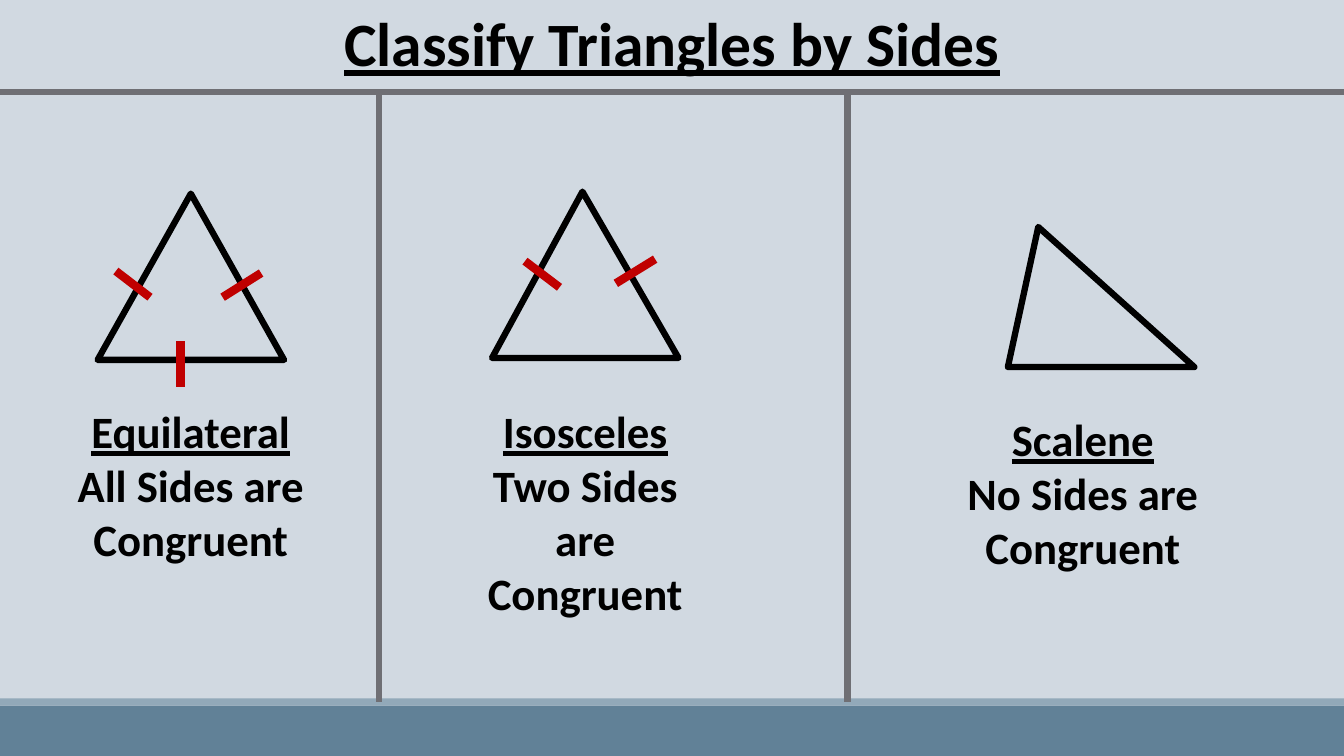
from lxml import etree
from pptx import Presentation
from pptx.dml.color import RGBColor
from pptx.enum.shapes import MSO_CONNECTOR, MSO_SHAPE
from pptx.enum.text import MSO_AUTO_SIZE, PP_ALIGN
from pptx.oxml.ns import qn
from pptx.util import Cm, Pt

STRAIGHT = MSO_CONNECTOR.STRAIGHT
RECTANGLE = MSO_SHAPE.RECTANGLE
TRIANGLE = MSO_SHAPE.ISOSCELES_TRIANGLE
CENTER = PP_ALIGN.CENTER
GROW = MSO_AUTO_SIZE.SHAPE_TO_FIT_TEXT

COLORS = {name: RGBColor.from_string(code) for name, code in {
    "background": "D1D9E1",
    "band": "618197",
    "band edge": "92A9B9",
    "rule": "6F6F74",
    "ink": "000000",
    "tick": "C00000",
}.items()}

WIDTH, HEIGHT = 33.87, 19.05
RULE_Y, DIVIDER_END = 2.31, 17.68

prs = Presentation()
prs.slide_width, prs.slide_height = Cm(WIDTH), Cm(HEIGHT)
slide = prs.slides.add_slide(prs.slide_layouts[6])
slide.background.fill.solid()
slide.background.fill.fore_color.rgb = COLORS["background"]


def add_line(x1, y1, x2, y2, color, weight):
    line = slide.shapes.add_connector(STRAIGHT, Cm(x1), Cm(y1), Cm(x2), Cm(y2))
    line.line.color.rgb = COLORS[color]
    line.line.width = Pt(weight)
    etree.SubElement(line._element.spPr, qn("a:effectLst"))


def add_text(box, size, paragraphs):
    frame = slide.shapes.add_textbox(*map(Cm, box)).text_frame
    frame.word_wrap = True
    frame.auto_size = GROW
    for i, (text, underline) in enumerate(paragraphs):
        paragraph = frame.add_paragraph() if i else frame.paragraphs[0]
        paragraph.alignment = CENTER
        run = paragraph.add_run()
        run.text = text
        run.font.color.rgb = COLORS["ink"]
        font_format = {"name": "Calibri", "size": Pt(size), "bold": True, "underline": underline}
        for attribute, value in font_format.items():
            setattr(run.font, attribute, value)


# Bottom bands
for top, height, color in [(17.78, 1.27, "band"), (17.6, 0.18, "band edge")]:
    band = slide.shapes.add_shape(RECTANGLE, 0, Cm(top), Cm(WIDTH), Cm(height))
    band.shadow.inherit = False
    band.fill.solid()
    band.fill.fore_color.rgb = COLORS[color]
    band.line.fill.background()

# Title and column rules
add_text((7.77, 0, 18.34, 2.57), 44, [("Classify Triangles by Sides", True)])
add_line(0, RULE_Y, WIDTH, RULE_Y, "rule", 4.5)
for divider_x in (9.55, 21.36):
    add_line(divider_x, RULE_Y, divider_x, DIVIDER_END, "rule", 4.5)

# Columns: name, description, text box, triangle box, apex position, congruence ticks
triangle_types = [
    ("Equilateral", "All Sides are Congruent",
     (1.57, 10.06, 6.48, 5.13), (2.46, 4.88, 4.7, 4.19), 0.5,
     [(3.78, 7.49, 2.92, 6.83), (4.55, 9.75, 4.55, 8.59), (6.58, 6.88, 5.61, 7.49)]),
    ("Isosceles", "Two Sides are Congruent",
     (11.51, 10.06, 6.48, 6.5), (12.4, 4.83, 4.7, 4.19), 0.485,
     [(14.1, 7.24, 13.23, 6.58), (16.51, 6.53, 15.52, 7.14)]),
    ("Scalene", "No Sides are Congruent",
     (24.05, 10.26, 6.48, 5.13), (25.4, 5.72, 4.7, 3.53), 0.163, []),
]
for name, description, text_box, triangle_box, apex, ticks in triangle_types:
    triangle = slide.shapes.add_shape(TRIANGLE, *map(Cm, triangle_box))
    triangle.shadow.inherit = False
    triangle.adjustments[0] = apex
    triangle.fill.solid()
    triangle.fill.fore_color.rgb = COLORS["background"]
    triangle.line.color.rgb = COLORS["ink"]
    triangle.line.width = Pt(4.5)
    for tick in ticks:
        add_line(*tick, "tick", 6)
    add_text(text_box, 32, [(name, True), (description, False)])

prs.save("out.pptx")
